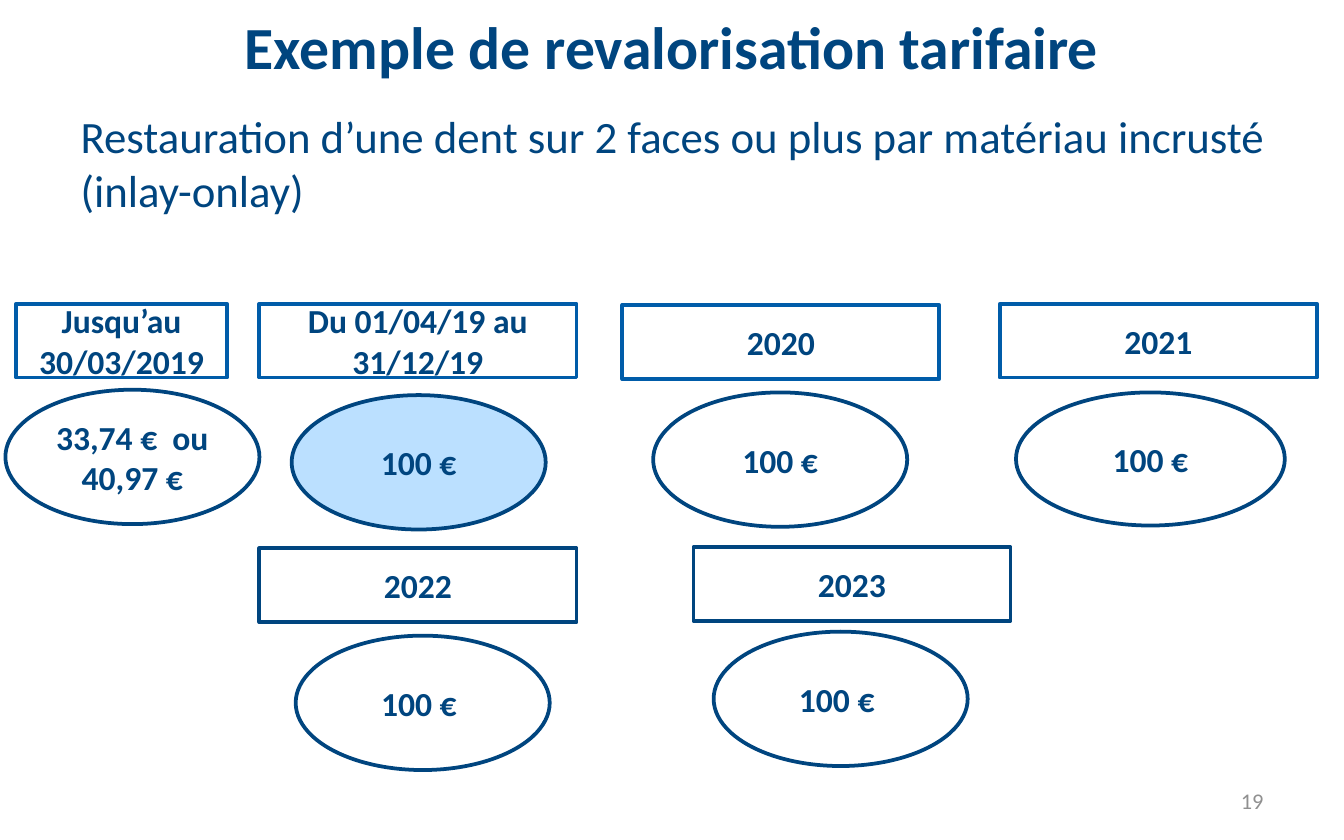
from pptx import Presentation
from pptx.dml.color import RGBColor
from pptx.enum.shapes import MSO_SHAPE
from pptx.enum.text import MSO_ANCHOR, PP_ALIGN
from pptx.oxml.xmlchemy import OxmlElement
from pptx.util import Inches, Pt

RECT, ELLIPSE = MSO_SHAPE.RECTANGLE, MSO_SHAPE.OVAL
MIDDLE, TOP = MSO_ANCHOR.MIDDLE, MSO_ANCHOR.TOP
LEFT, CENTER, RIGHT = PP_ALIGN.LEFT, PP_ALIGN.CENTER, PP_ALIGN.RIGHT

COLORS = {"navy": "00457F", "blue": "005CA9", "pale": "BBE0FF", "grey": "909090"}
FONT = "Calibri"
TITLE = "Exemple de revalorisation tarifaire"
TREATMENT = "Restauration d’une dent sur 2 faces ou plus par matériau incrusté (inlay-onlay)"
PAGE_NUMBER = "19"

PERIOD_WIDTH, PERIOD_HEIGHT = 2.36, 0.55
PRICE_SIZE = (1.89, 1)
# period, left, top, width, line colour
PERIODS = [
    ("Jusqu’au 30/03/2019", 0.12, 2.26, 1.57, "blue"),
    ("Du 01/04/19 au 31/12/19", 1.93, 2.26, PERIOD_WIDTH, "blue"),
    ("2020", 4.63, 2.27, PERIOD_WIDTH, "blue"),
    ("2021", 7.44, 2.26, PERIOD_WIDTH, "blue"),
    ("2022", 1.93, 4.08, PERIOD_WIDTH, "navy"),
    ("2023", 5.16, 4.07, PERIOD_WIDTH, "navy"),
]
# price, left, top, size, fill colour
PRICES = [
    ("33,74 €  ou 40,97 €", 0.04, 2.9, PRICE_SIZE, None),
    ("100 €", 2.17, 2.94, PRICE_SIZE, "pale"),
    ("100 €", 4.86, 2.92, PRICE_SIZE, None),
    ("100 €", 7.56, 2.92, (2, 0.99), None),
    ("100 € ", 2.2, 4.73, PRICE_SIZE, None),
    ("100 € ", 5.31, 4.7, PRICE_SIZE, None),
]


def rgb(name):
    return RGBColor.from_string(COLORS[name])


def place(shape, left, top, width, height):
    shape.left, shape.top = Inches(left), Inches(top)
    shape.width, shape.height = Inches(width), Inches(height)


def write(shape, text, size, color="navy", bold=False, align=CENTER, anchor=MIDDLE):
    frame = shape.text_frame
    frame.word_wrap = True
    frame.vertical_anchor = anchor
    frame.text = text
    paragraph = frame.paragraphs[0]
    paragraph.alignment = align
    font = paragraph.font
    font.name, font.size, font.bold = FONT, Pt(size), bold
    font.color.rgb = rgb(color)
    return paragraph


def add_label(slide, kind, text, box, line, fill=None):
    label = slide.shapes.add_shape(kind, *map(Inches, box))
    label.shadow.inherit = False
    if fill:
        label.fill.solid()
        label.fill.fore_color.rgb = rgb(fill)
    else:
        label.fill.background()
    label.line.color.rgb = rgb(line)
    label.line.width = Pt(2)
    write(label, text, 18, bold=True)


def main():
    prs = Presentation()
    prs.slide_width, prs.slide_height = Inches(10), Inches(6.25)
    slide = prs.slides.add_slide(prs.slide_layouts[1])

    title = slide.shapes.title
    place(title, 0, -0.18, 10, 1.04)
    write(title, TITLE, 32, bold=True)

    body = slide.placeholders[1]
    place(body, 0, 0.76, 10, 4.72)
    treatment = write(body, TREATMENT, 24, align=LEFT, anchor=TOP)
    treatment.level = 1
    treatment.space_before = treatment.space_after = Pt(9)
    properties = treatment._p.get_or_add_pPr()
    properties.set("marL", str(Inches(0.5)))
    properties.set("indent", "0")
    # Bullet settings must come before the default run properties.
    properties.find(properties.defRPr.tag).addprevious(OxmlElement("a:buNone"))

    for price, left, top, size, fill in PRICES:
        add_label(slide, ELLIPSE, price, (left, top, *size), "navy", fill)
    for period, left, top, width, line in PERIODS:
        add_label(slide, RECT, period, (left, top, width, PERIOD_HEIGHT), line)

    number = slide.shapes.add_textbox(*map(Inches, (7.17, 5.79, 2.33, 0.33)))
    write(number, PAGE_NUMBER, 12, "grey", align=RIGHT)

    prs.save("out.pptx")


if __name__ == "__main__":
    main()
